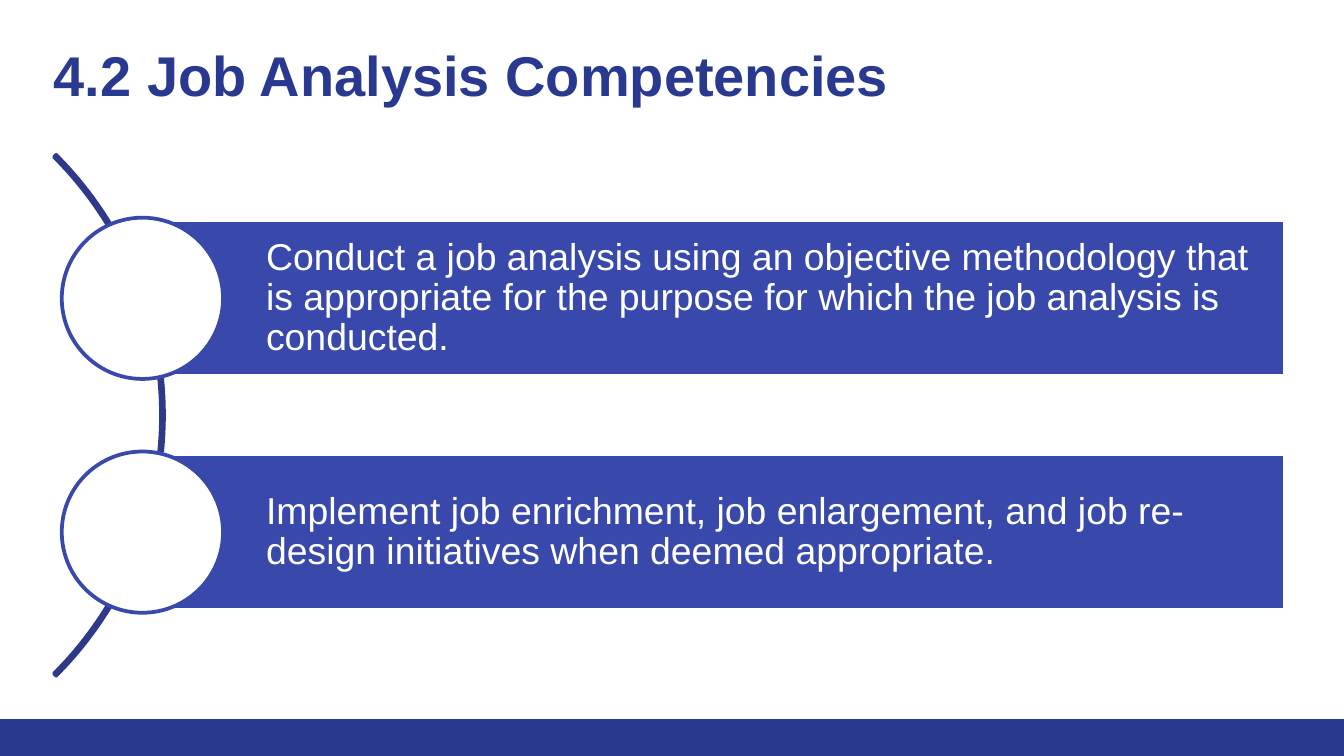
from pptx import Presentation
from pptx.dml.color import RGBColor
from pptx.enum.shapes import MSO_SHAPE
from pptx.enum.text import MSO_ANCHOR, MSO_AUTO_SIZE, PP_ALIGN
from pptx.util import Inches, Pt

RECT, OVAL, ARC = MSO_SHAPE.RECTANGLE, MSO_SHAPE.OVAL, MSO_SHAPE.BLOCK_ARC
TOP, MIDDLE = MSO_ANCHOR.TOP, MSO_ANCHOR.MIDDLE
LEFT, NO_FIT = PP_ALIGN.LEFT, MSO_AUTO_SIZE.NONE

COLORS = {"navy": "2A3990", "arc": "2E3A89", "bar": "3949AB", "white": "FFFFFF"}


def add_shape(kind, x, y, w, h, fill=None, line=None):
    sp = s.shapes.add_shape(kind, Inches(x), Inches(y), Inches(w), Inches(h))
    sp.shadow.inherit = False
    if fill:
        sp.fill.solid()
        sp.fill.fore_color.rgb = RGBColor.from_string(COLORS[fill])
    else:
        sp.fill.background()
    if line:
        sp.line.color.rgb = RGBColor.from_string(COLORS[line])
        sp.line.width = Pt(2)
    else:
        sp.line.fill.background()
    return sp


def set_text(sp, text, size, color, bold=False, anchor=TOP, inset=0.1, left=0.1, spacing=1.0):
    tf = sp.text_frame
    tf.word_wrap = True
    tf.auto_size = NO_FIT
    tf.vertical_anchor = anchor
    tf.margin_left = Inches(left)
    tf.margin_top = tf.margin_right = tf.margin_bottom = Inches(inset)
    p = tf.paragraphs[0]
    p.alignment = LEFT
    p.line_spacing = spacing
    p.space_before = Pt(0)
    r = p.add_run()
    r.text = text
    r.font.name = "Arial"
    r.font.size = Pt(size)
    r.font.bold = bold
    r.font.color.rgb = RGBColor.from_string(COLORS[color])


prs = Presentation()
prs.slide_width = Inches(10)
prs.slide_height = Inches(10 * 9 / 16)
s = prs.slides.add_slide(prs.slide_layouts[5])

add_shape(RECT, 0, 5.35, 10, 0.28, fill="navy")

title = s.shapes.title
title.left, title.top = Inches(0.3), Inches(0.2)
title.width, title.height = Inches(9.32), Inches(0.66)
set_text(title, "4.2 Job Analysis Competencies", 30, "navy", bold=True)

arc = add_shape(ARC, -4.26, 0.35, 5.48, 5.48, line="arc")
for i, value in enumerate((189, 27, 0.004)):
    arc.adjustments[i] = value

competencies = [
    "Conduct a job analysis using an objective methodology that is appropriate "
    "for the purpose for which the job analysis is conducted.",
    "Implement job enrichment, job enlargement, and job re-design initiatives "
    "when deemed appropriate.",
]
bar_x, bar_h, pitch, circle_d = 1.06, 1.16, 1.74, 1.2
for i, text in enumerate(competencies):
    center_y = 2.22 + i * pitch
    bar = add_shape(RECT, bar_x, center_y - bar_h / 2, 8.5, bar_h, fill="bar", line="white")
    set_text(bar, text, 20, "white", anchor=MIDDLE, inset=0.06, left=0.92, spacing=0.9)
    add_shape(OVAL, bar_x - circle_d / 2, center_y - circle_d / 2, circle_d, circle_d,
              fill="white", line="bar")

prs.save("out.pptx")
